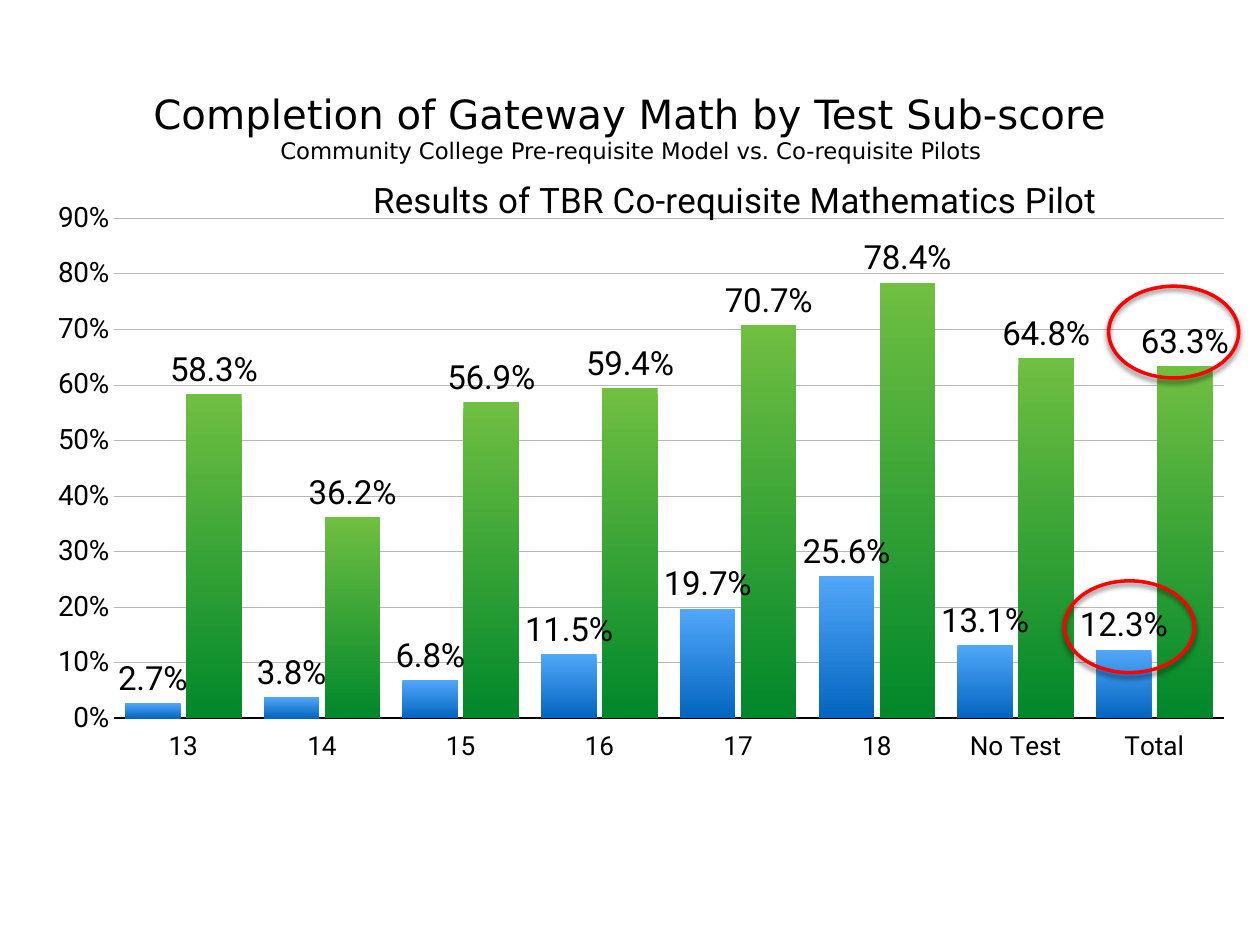
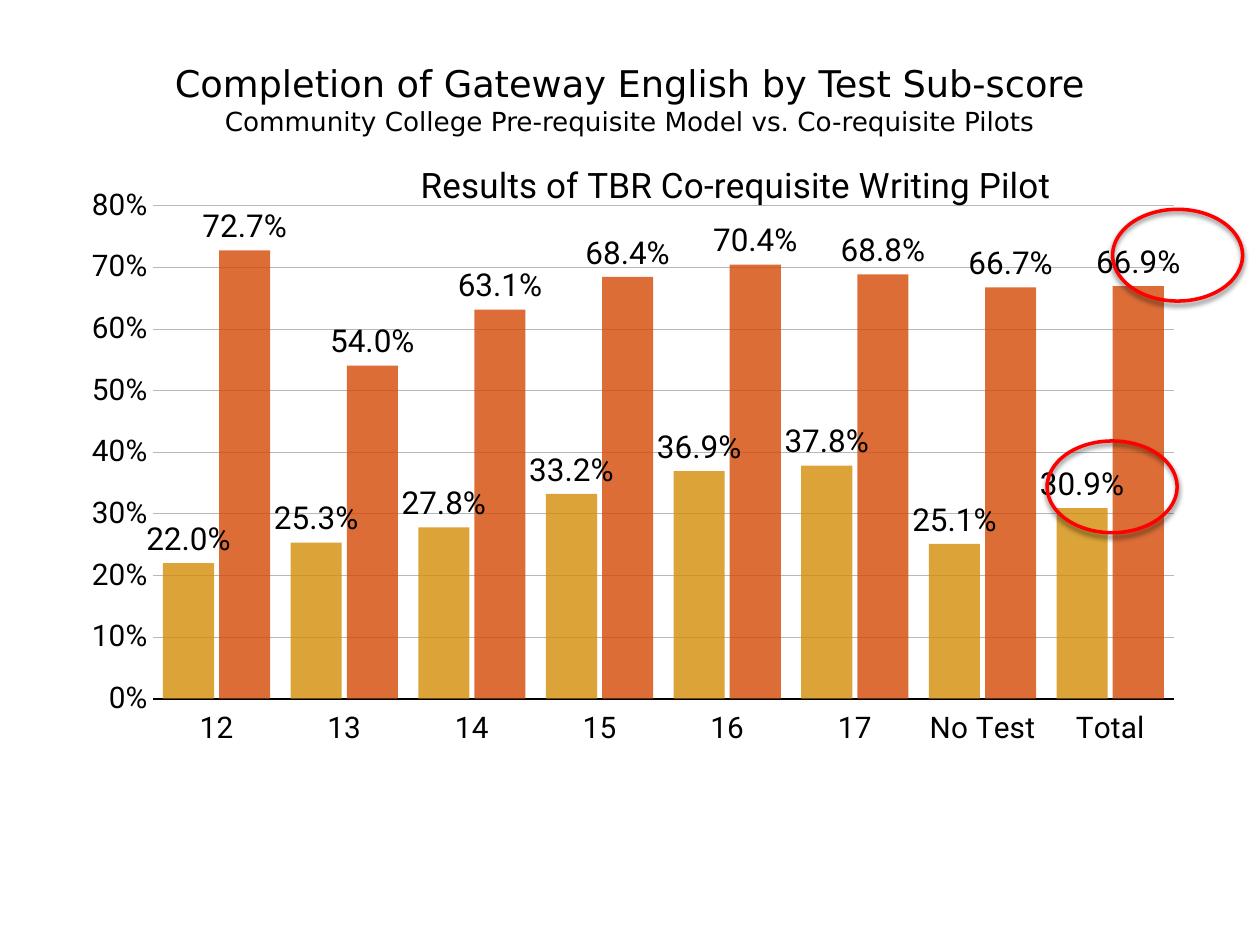
from pptx import Presentation
from pptx import util as u
from pptx.chart.data import CategoryChartData
from pptx.dml.color import RGBColor
from pptx.enum import chart as ch, shapes, text
from pptx.oxml import parse_xml
from pptx.oxml.ns import nsdecls, qn

BLACK, RED, GREY = "000000", "FF0000", "B8B8B8"
HEAD, BODY = "DejaVu Sans", "Roboto"
NAMES = ("Pre-requisite Model", "Co-requisite Pilots")
SUB = "Community College " + " vs. ".join(NAMES)
RING = (2.62, 1.85)


def rgb(code):
    return RGBColor.from_string(code)


def place(parent, index, spots):
    """Lay out a chart part: x, y and maybe w, h in percent of the chart."""
    for old in parent.findall(qn("c:layout")):
        parent.remove(old)
    target = '<c:layoutTarget val="inner"/>' if len(spots) == 4 else ""
    modes = "".join(f'<c:{k}Mode val="edge"/>' for k in "xy")
    vals = "".join(f'<c:{k} val="{v / 100:.3f}"/>'
                   for k, v in zip("xywh", spots))
    parent.insert(index, parse_xml(
        f'<c:layout {nsdecls("c")}><c:manualLayout>{target}{modes}{vals}'
        '</c:manualLayout></c:layout>'))


class Deck:
    def __init__(self):
        self.prs = Presentation()
        self.prs.slide_width, self.prs.slide_height = u.Cm(25.4), u.Cm(19.05)
        self.slide = None

    def style(self, font, size, name=BODY):
        font.name, font.size, font.bold = name, u.Pt(size), False
        font.color.rgb = rgb(BLACK)

    def start(self):
        self.slide = self.prs.slides.add_slide(self.prs.slide_layouts[5])

    def title(self, box, lines):
        """Fill the title with (wording, size) lines."""
        shape = self.slide.shapes.title
        shape.left, shape.top, shape.width, shape.height = map(u.Cm, box)
        frame = shape.text_frame
        frame.word_wrap, frame.auto_size = True, text.MSO_AUTO_SIZE.NONE
        frame.vertical_anchor = text.MSO_ANCHOR.MIDDLE
        frame.margin_left = frame.margin_right = u.Cm(0.13)
        frame.margin_top = frame.margin_bottom = u.Cm(0.13)
        para = frame.paragraphs[0]
        para.alignment = text.PP_ALIGN.CENTER
        for n, (words, size) in enumerate(lines):
            if n:
                para.add_line_break()
            run = para.add_run()
            run.text = words
            self.style(run.font, size, HEAD)

    def bars(self, box, head, spot, plot, cats, rows, fills, top, sizes):
        """Column chart; sizes are for categories, values and labels."""
        data = CategoryChartData(number_format="0.0%")
        data.categories = cats
        for name, row in zip(NAMES, rows):
            data.add_series(name, [round(v / 100, 3) for v in row])
        chart = self.slide.shapes.add_chart(
            ch.XL_CHART_TYPE.COLUMN_CLUSTERED, *map(u.Cm, box), data).chart
        self.style(chart.font, 10)
        chart.has_legend = False

        # Heading and plot area
        run = chart.chart_title.text_frame.paragraphs[0].add_run()
        run.text = head
        self.style(run.font, 20)
        title = chart.chart_title._element
        place(title, 1, spot)
        title.find(qn("c:overlay")).set("val", "1")
        place(chart._chartSpace.chart.plotArea, 0, plot)

        # Axes
        for axis, size in zip((chart.category_axis, chart.value_axis), sizes):
            axis.major_tick_mark = axis.minor_tick_mark = ch.XL_TICK_MARK.NONE
            self.style(axis.tick_labels.font, size)
        cat, val = chart.category_axis, chart.value_axis
        cat.tick_label_position = ch.XL_TICK_LABEL_POSITION.LOW
        cat.format.line.color.rgb = rgb(BLACK)
        cat.format.line.width = u.Pt(1)
        val.minimum_scale, val.maximum_scale, val.major_unit = 0, top, 0.1
        val.tick_labels.number_format = "#,##0%"
        val.tick_labels.number_format_is_linked = False
        val.format.line.fill.background()
        grid = val.major_gridlines.format.line
        grid.color.rgb, grid.width = rgb(GREY), u.Pt(0.25)

        # Columns and their labels
        group = chart.plots[0]
        group.gap_width, group.overlap = 40, -10
        group.vary_by_categories = False
        for series, hues in zip(group.series, fills):
            series.invert_if_negative = False
            self.paint(series, hues)
            labels = series.data_labels
            labels.show_value = True
            labels.position = ch.XL_LABEL_POSITION.OUTSIDE_END
            labels.number_format = "#,##0.0%"
            labels.number_format_is_linked = False
            self.style(labels.font, sizes[2])

    def paint(self, series, hues):
        """Two hues make a gradient, one a fill of 80% opacity."""
        fill = series.format.fill
        if len(hues) == 2:
            fill.gradient()
            fill.gradient_angle = 270
            for stop, hue, at in zip(fill.gradient_stops, hues, (0, 1)):
                stop.color.rgb, stop.position = rgb(hue), at
        else:
            fill.solid()
            fill.fore_color.rgb = rgb(hues[0])
            tint = next(series._element.spPr.iter(qn("a:srgbClr")))
            tint.append(parse_xml(f'<a:alpha {nsdecls("a")} val="80000"/>'))

    def ring(self, left, top):
        oval = self.slide.shapes.add_shape(
            shapes.MSO_SHAPE.OVAL, *map(u.Cm, (left, top, *RING)))
        oval.fill.background()
        oval.line.color.rgb, oval.line.width = rgb(RED), u.Pt(2)
        oval.shadow.inherit = False
        oval._element.spPr.find(qn("a:effectLst")).append(parse_xml(
            f'<a:outerShdw {nsdecls("a")} blurRad="{u.Pt(3)}" '
            f'dist="{u.Pt(2)}" dir="5400000" rotWithShape="0">'
            f'<a:srgbClr val="{BLACK}"><a:alpha val="50000"/></a:srgbClr>'
            '</a:outerShdw>'))


def main():
    deck = Deck()

    # Math results
    deck.start()
    deck.title((1.75, 1.17, 21.92, 2.77),
               [("Completion of Gateway Math by Test Sub-score", 23),
                (SUB, 13)])
    deck.bars((1.07, 3.35, 23.7, 12.62),
              "Results of TBR Co-requisite Mathematics Pilot",
              (26.8, 0.6), (5.2, 8.3, 94.8, 79.9),
              ["13", "14", "15", "16", "17", "18", "No Test", "Total"],
              [(2.7, 3.8, 6.8, 11.5, 19.7, 25.6, 13.1, 12.3),
               (58.3, 36.2, 56.9, 59.4, 70.7, 78.4, 64.8, 63.3)],
              [("51A7F9", "0365C0"), ("70BF41", "00882B")],
              0.9, (15, 16, 19))
    deck.ring(22.35, 5.77)
    deck.ring(21.46, 11.71)

    # English results
    deck.start()
    deck.title((1.27, 0.46, 22.86, 3.05),
               [("Completion of Gateway English by Test Sub-score", 21),
                (SUB, 15)])
    deck.bars((1.85, 3.05, 23.16, 12.85),
              "Results of TBR Co-requisite Writing Pilot",
              (28, 0.6), (5.2, 8.5, 89, 77.4),
              ["12", "13", "14", "15", "16", "17", "No Test", "Total"],
              [(22.0, 25.3, 27.8, 33.2, 36.9, 37.8, 25.1, 30.9),
               (72.7, 54.0, 63.1, 68.4, 70.4, 68.8, 66.7, 66.9)],
              [("D38C07",), ("D44906",)],
              0.8, (17, 17, 18))
    deck.ring(22.43, 4.22)
    deck.ring(21.11, 8.89)

    deck.prs.save("out.pptx")


if __name__ == "__main__":
    main()
